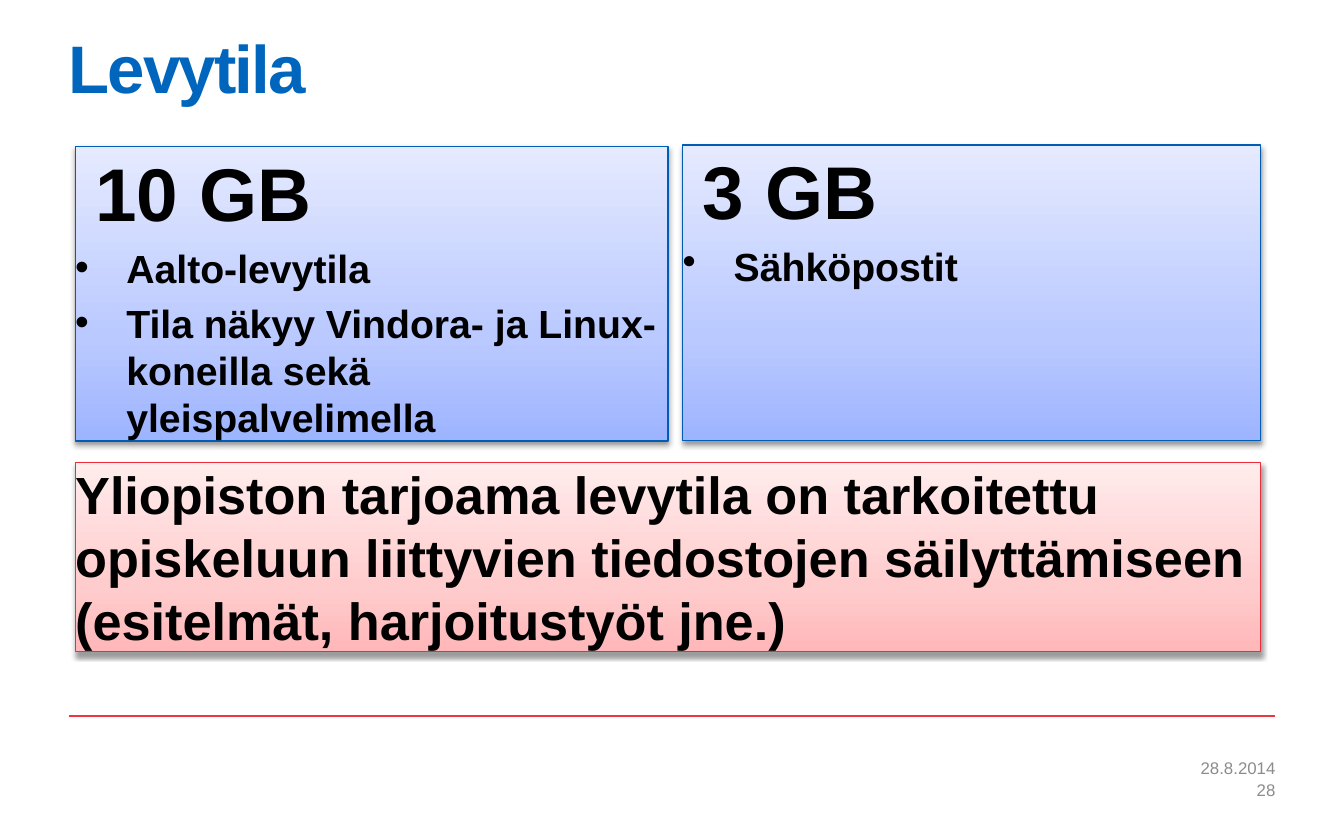
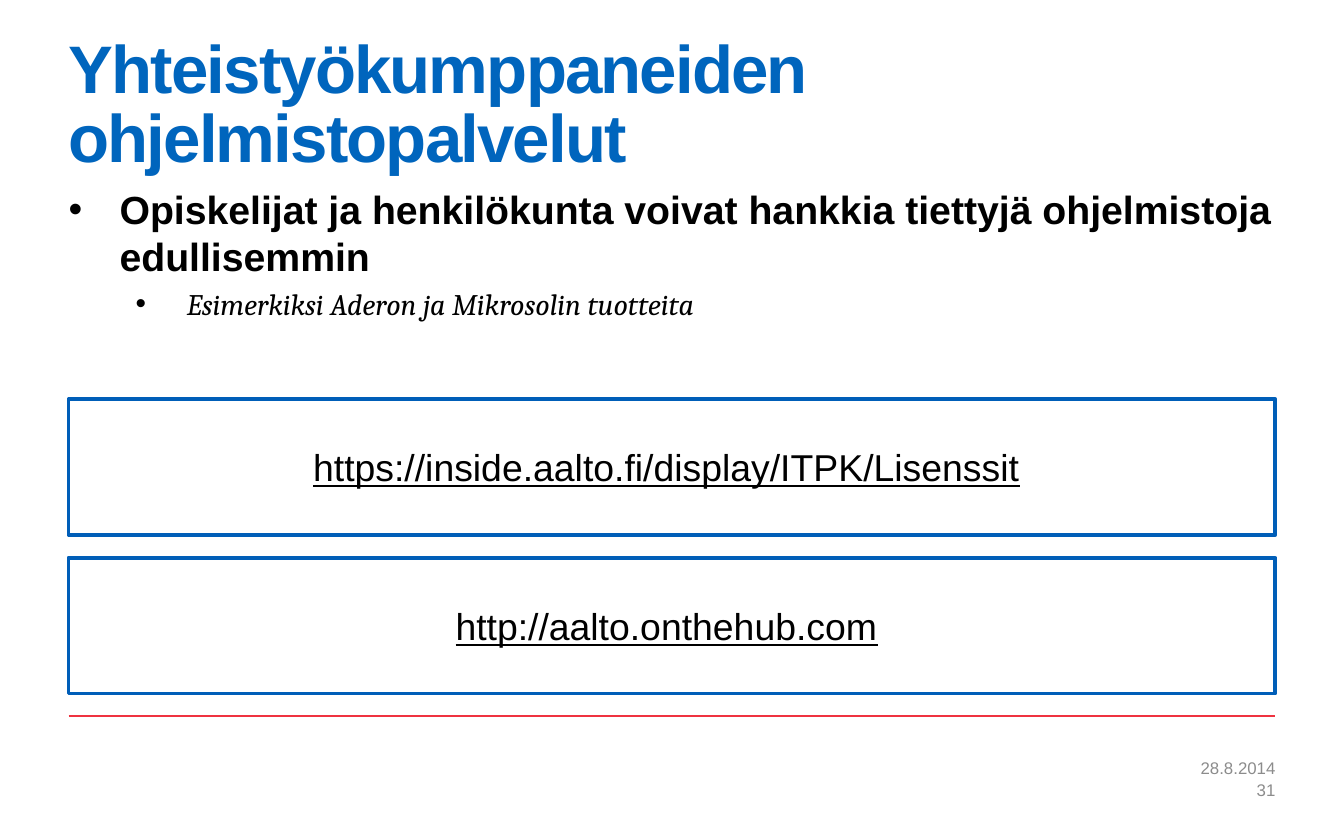
from copy import deepcopy
from dataclasses import dataclass
from typing import Any, Sequence

from lxml.etree import SubElement
from pptx import Presentation
from pptx.dml.color import RGBColor
from pptx.enum.shapes import MSO_CONNECTOR, MSO_SHAPE
from pptx.enum.text import MSO_ANCHOR, MSO_AUTO_SIZE, PP_ALIGN
from pptx.oxml.ns import qn
from pptx.util import Inches, Pt

WIDTH, HEIGHT = Inches(10), Inches(6.25)
COLORS = {
    "title": "0065BD",
    "text": "000000",
    "footer": "8C8C8C",
    "rule": "EF3340",
    "white": "FFFFFF",
    "link_border": "005EB8",
}
GRADIENT_POSITIONS = (0, 0.35, 1)
SPACE_SHARE = 0.2


@dataclass(frozen=True)
class Area:
    left: float
    top: float
    width: float
    height: float

    def box(self) -> dict[str, int]:
        return {
            "left": round(WIDTH * self.left / 100),
            "top": round(HEIGHT * self.top / 100),
            "width": round(WIDTH * self.width / 100),
            "height": round(HEIGHT * self.height / 100),
        }


@dataclass(frozen=True)
class Line:
    text: str
    size: float
    bold: bool = False
    italic: bool = False
    underline: bool = False
    font: str = "Arial"
    color: str = "text"
    level: int = 0
    indent: float = 0
    bullet: bool = False
    align: PP_ALIGN = PP_ALIGN.LEFT


@dataclass(frozen=True)
class Tint:
    stops: tuple[str, str, str]
    border: str


BLUE = Tint(("9DB4FF", "BAC9FF", "E5EAFF"), "005CB4")
RED = Tint(("FFB7B9", "FFCCCD", "FFECEC"), "EE2D3B")

TITLE = Area(5.1, 4.64, 89.8, 17.44)
INTRO = Area(5.1, 22.08, 89.8, 20.32)
RULE = Area(5.1, 85.28, 89.8, 0)
DATE = Area(55.3, 90.08, 39.6, 2.72)
NUMBER = Area(55.3, 92.8, 39.6, 2.4)
DISK_QUOTA = Area(5.6, 17.44, 44.1, 35.04)
MAIL_QUOTA = Area(50.8, 17.28, 43, 35.2)
PURPOSE = Area(5.6, 55.04, 88.2, 22.56)
LINK_TOP, LINK_STEP, LINK_HEIGHT = 47.52, 18.88, 16.16


def apply(target: Any, values: dict[str, Any]) -> None:
    for name, value in values.items():
        setattr(target, name, value)


def rgb(value: str) -> RGBColor:
    return RGBColor.from_string(COLORS.get(value, value))


def heading(text: str) -> Line:
    return Line(text, 40, bold=True, indent=0.15)


def point(text: str) -> Line:
    return Line(text, 21, bold=True, indent=0.38, bullet=True)


def write(shape: Any, lines: Sequence[Line], anchor: MSO_ANCHOR = MSO_ANCHOR.TOP,
          right: float = 0) -> None:
    frame = shape.text_frame
    apply(frame, {
        "margin_left": 0, "margin_top": 0, "margin_bottom": 0,
        "margin_right": Inches(right), "word_wrap": True,
        "auto_size": MSO_AUTO_SIZE.NONE, "vertical_anchor": anchor,
    })
    for index, line in enumerate(lines):
        paragraph = frame.add_paragraph() if index else frame.paragraphs[0]
        apply(paragraph, {
            "alignment": line.align,
            "level": line.level,
            "space_before": Pt(line.size * SPACE_SHARE if index else 0),
        })
        properties = paragraph._p.get_or_add_pPr()
        properties.set("marL", str(Inches(line.indent)))
        properties.set("indent", str(Inches(-0.38) if line.bullet else 0))
        if line.bullet:
            SubElement(properties, qn("a:buChar"), char="•")
        else:
            SubElement(properties, qn("a:buNone"))
        run = paragraph.add_run()
        run.text = line.text
        apply(run.font, {
            "name": line.font, "size": Pt(line.size), "bold": line.bold,
            "italic": line.italic, "underline": line.underline,
        })
        run.font.color.rgb = rgb(line.color)


def outline(shape: Any, color: str, width: float) -> None:
    shape.line.color.rgb = rgb(color)
    shape.line.width = Pt(width)


def decorate(shape: Any, tint: Tint) -> None:
    shape.fill.gradient()
    shape.fill.gradient_angle = 90
    stop_list = shape._element.spPr.find(".//" + qn("a:gsLst"))
    stop_list.insert(1, deepcopy(stop_list[0]))
    for stop, position, color in zip(
            shape.fill.gradient_stops, GRADIENT_POSITIONS, tint.stops):
        stop.position = position
        stop.color.rgb = rgb(color)
    outline(shape, tint.border, 0.75)
    shape.shadow.inherit = False
    effects = shape._element.spPr.find(qn("a:effectLst"))
    shadow = SubElement(effects, qn("a:outerShdw"), blurRad=str(Pt(3.1)),
                        dist=str(Pt(1.6)), dir="5400000", rotWithShape="0")
    black = SubElement(shadow, qn("a:srgbClr"), val=COLORS["text"])
    SubElement(black, qn("a:alpha"), val="38000")


def add_rectangle(slide: Any, area: Area) -> Any:
    return slide.shapes.add_shape(MSO_SHAPE.RECTANGLE, **area.box())


def add_panel(slide: Any, area: Area, tint: Tint, lines: Sequence[Line]) -> None:
    panel = add_rectangle(slide, area)
    decorate(panel, tint)
    write(panel, lines)


def add_link(slide: Any, row: int, address: str) -> None:
    area = Area(INTRO.left, LINK_TOP + row * LINK_STEP, INTRO.width, LINK_HEIGHT)
    link = add_rectangle(slide, area)
    link.shadow.inherit = False
    link.fill.solid()
    link.fill.fore_color.rgb = rgb("white")
    outline(link, "link_border", 2)
    write(link, [Line(address, 20, underline=True, align=PP_ALIGN.CENTER)],
          MSO_ANCHOR.MIDDLE, right=0.08)


def add_rule(slide: Any) -> None:
    box = RULE.box()
    end = box["left"] + box["width"]
    rule = slide.shapes.add_connector(
        MSO_CONNECTOR.STRAIGHT, box["left"], box["top"], end, box["top"])
    outline(rule, "rule", 1)
    SubElement(rule._element.spPr, qn("a:effectLst"))


def add_page(deck: Any, title: str, number: int, body_area: Area,
             body_lines: Sequence[Line]) -> tuple[Any, Any]:
    slide = deck.slides.add_slide(deck.slide_layouts[1])
    add_rule(slide)
    heading_box, body = slide.shapes.title, slide.placeholders[1]
    apply(heading_box, TITLE.box())
    write(heading_box, [Line(title, 36, bold=True, color="title")])
    title_paragraph = heading_box.text_frame.paragraphs[0]
    title_paragraph.line_spacing = 0.85
    title_paragraph.runs[0]._r.get_or_add_rPr().set("spc", "-100")
    apply(body, body_area.box())
    write(body, body_lines)
    for area, text in ((DATE, "28.8.2014"), (NUMBER, str(number))):
        footer = slide.shapes.add_textbox(**area.box())
        write(footer, [Line(text, 9, color="footer", align=PP_ALIGN.RIGHT)],
              MSO_ANCHOR.MIDDLE)
    return slide, body


def build_disk_space(deck: Any) -> None:
    slide, disk_quota = add_page(deck, "Levytila", 28, DISK_QUOTA, [
        heading("10 GB"),
        point("Aalto-levytila"),
        point("Tila näkyy Vindora- ja Linux-koneilla sekä yleispalvelimella"),
    ])
    decorate(disk_quota, BLUE)
    add_panel(slide, MAIL_QUOTA, BLUE, [heading("3 GB"), point("Sähköpostit")])
    add_panel(slide, PURPOSE, RED, [Line(
        "Yliopiston tarjoama levytila on tarkoitettu opiskeluun liittyvien "
        "tiedostojen säilyttämiseen (esitelmät, harjoitustyöt jne.)",
        28, bold=True)])


def build_partner_services(deck: Any) -> None:
    slide, _ = add_page(
        deck, "Yhteistyökumppaneiden ohjelmistopalvelut", 31, INTRO, [
            point("Opiskelijat ja henkilökunta voivat hankkia tiettyjä "
                  "ohjelmistoja edullisemmin"),
            Line("Esimerkiksi Aderon ja Mikrosolin tuotteita", 16, italic=True,
                 font="Cambria", level=1, indent=0.88, bullet=True),
        ])
    addresses = ("https://inside.aalto.fi/display/ITPK/Lisenssit",
                 "http://aalto.onthehub.com")
    for row, address in enumerate(addresses):
        add_link(slide, row, address)


def main() -> None:
    deck = Presentation()
    apply(deck, {"slide_width": WIDTH, "slide_height": HEIGHT})
    build_disk_space(deck)
    build_partner_services(deck)
    deck.save("out.pptx")


if __name__ == "__main__":
    main()
